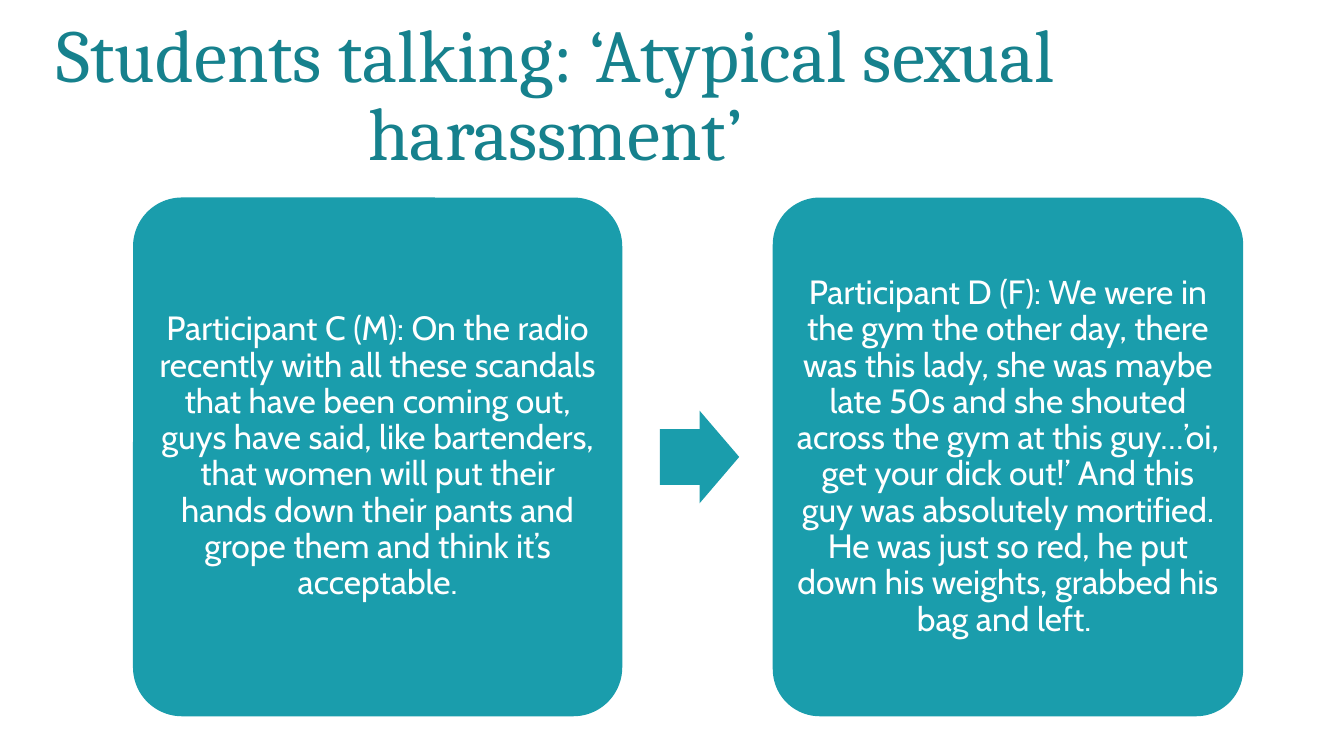
from dataclasses import dataclass

from pptx import Presentation
from pptx.dml.color import RGBColor
from pptx.enum.shapes import MSO_SHAPE as Shape
from pptx.enum.text import MSO_ANCHOR as Anchor, PP_ALIGN as Align
from pptx.shapes.autoshape import Shape as AutoShape
from pptx.slide import Slide
from pptx.text.text import TextFrame
from pptx.util import Inches, Length, Pt

COLORS = {"title": "16818D", "panel": "1A9DAC", "quote": "FFFFFF"}
PANEL_TOP, PANEL_HEIGHT = 1.47, 3.86
ARROW_WIDTH, ARROW_HEIGHT = 0.59, 0.69


@dataclass
class Quote:
    left: float
    width: float
    text: str


QUOTES = [
    Quote(0.99, 3.64,
          "Participant C (M): On the radio recently with all these scandals that "
          "have been coming out, guys have said, like bartenders, that women will "
          "put their hands down their pants and grope them and think it’s acceptable."),
    Quote(5.75, 3.5,
          "Participant D (F): We were in the gym the other day, there was this lady, "
          "she was maybe late 50s and she shouted across the gym at this guy…’oi, "
          "get your dick out!’ And this guy was absolutely mortified. He was just so "
          "red, he put down his weights, grabbed his bag and left. "),
]


def write_text(frame: TextFrame, text: str, *, font: str, size: float, color: str,
               spacing: float | Length, margin: float = 0,
               anchor: Anchor = Anchor.TOP) -> None:
    frame.word_wrap = True
    frame.vertical_anchor = anchor
    frame.margin_left = frame.margin_right = Inches(margin)
    frame.margin_top = frame.margin_bottom = Inches(margin)
    para = frame.paragraphs[0]
    para.alignment = Align.CENTER
    para.line_spacing = spacing
    span = para.add_run()
    span.text = text
    span.font.name = font
    span.font.size = Pt(size)
    span.font.color.rgb = RGBColor.from_string(COLORS[color])


def add_filled(page: Slide, kind: Shape, left: float, top: float, width: float,
               height: float, adjustments: list[float]) -> AutoShape:
    box = page.shapes.add_shape(kind, Inches(left), Inches(top),
                                Inches(width), Inches(height))
    box.shadow.inherit = False
    box.fill.solid()
    box.fill.fore_color.rgb = RGBColor.from_string(COLORS["panel"])
    box.line.fill.background()
    for index, value in enumerate(adjustments):
        box.adjustments[index] = value
    return box


def add_quote(page: Slide, quote: Quote) -> None:
    box = add_filled(page, Shape.ROUNDED_RECTANGLE, quote.left, PANEL_TOP,
                     quote.width, PANEL_HEIGHT, [0.1])
    write_text(box.text_frame, quote.text, font="Cabin", size=18, color="quote",
               spacing=0.9, margin=0.07, anchor=Anchor.MIDDLE)


def main() -> None:
    deck = Presentation()
    deck.slide_width = Inches(10)
    deck.slide_height = Inches(10 * 9 / 16)
    page = deck.slides.add_slide(deck.slide_layouts[6])

    title = page.shapes.add_textbox(Inches(0.12), Inches(0.14),
                                    Inches(8.03), Inches(1.01))
    write_text(title.text_frame, "Students talking: ‘Atypical sexual harassment’",
               font="Cambria", size=40, color="title", spacing=Pt(42))

    for quote in QUOTES:
        add_quote(page, quote)

    arrow_top = PANEL_TOP + (PANEL_HEIGHT - ARROW_HEIGHT) / 2
    add_filled(page, Shape.RIGHT_ARROW, 4.91, arrow_top,
               ARROW_WIDTH, ARROW_HEIGHT, [0.6, 0.5])

    deck.save("out.pptx")


if __name__ == "__main__":
    main()
